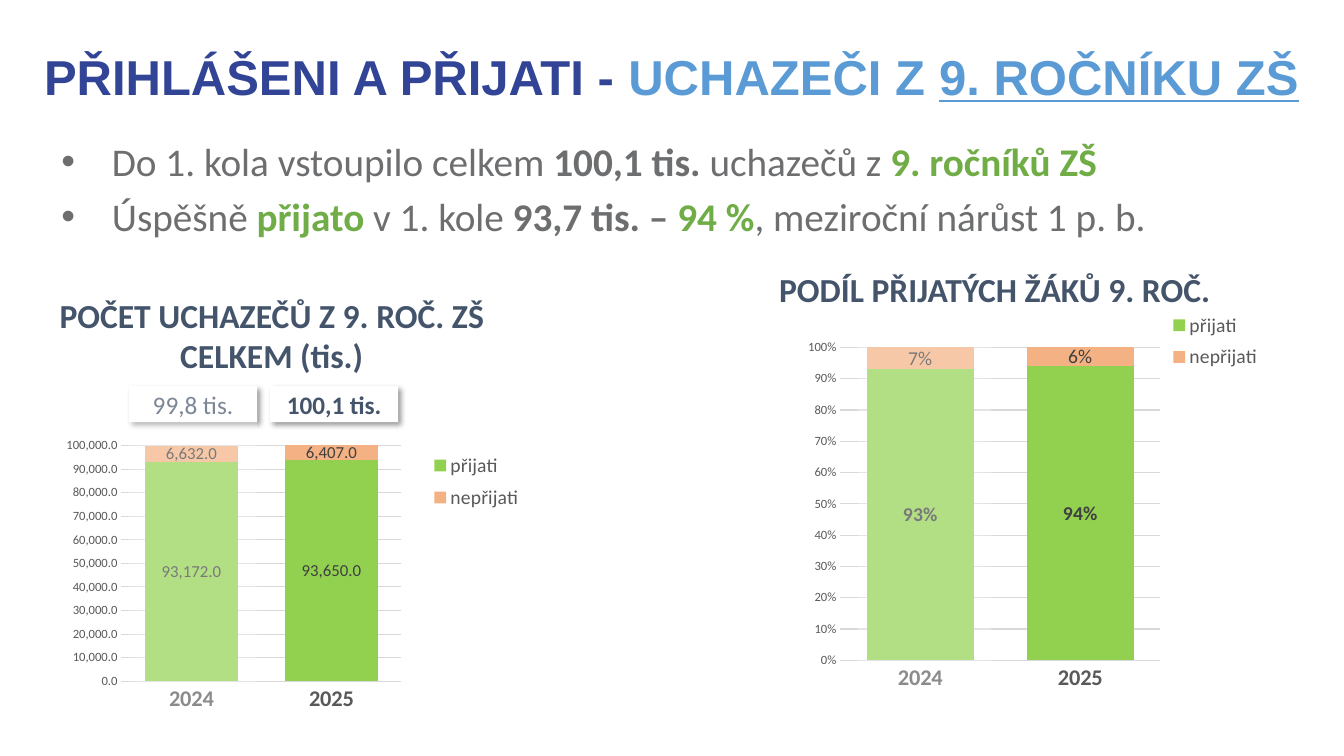
from dataclasses import dataclass

from lxml.etree import SubElement
from pptx import Presentation
from pptx.chart.chart import Chart
from pptx.chart.data import CategoryChartData as Data
from pptx.dml.color import RGBColor as Rgb
from pptx.enum.chart import XL_CHART_TYPE as Kind
from pptx.enum.chart import XL_LEGEND_POSITION as Side
from pptx.enum.chart import XL_TICK_MARK as Tick
from pptx.enum.shapes import MSO_SHAPE as Form
from pptx.enum.text import MSO_ANCHOR as Anchor
from pptx.enum.text import MSO_AUTO_SIZE as Fit
from pptx.enum.text import PP_ALIGN as Align
from pptx.oxml import parse_xml
from pptx.oxml.ns import nsdecls, qn
from pptx.util import Emu, Pt

SCALE = 9144


@dataclass(frozen=True)
class Theme:
    head: str = "Arial"
    body: str = "Calibri"
    navy: str = "324496"
    sky: str = "5B9BD5"
    gray: str = "6D6E70"
    green: str = "70AD47"
    slate: str = "44546A"
    white: str = "FFFFFF"
    black: str = "000000"
    axis: str = "595959"
    grid: str = "D9D9D9"
    label: str = "404040"
    lime: str = "92D050"
    peach: str = "F4B183"
    title: int = 35
    list: int = 28
    name: int = 24
    total: int = 18
    year: int = 16
    key: int = 14
    base: int = 10
    scale: int = 9


THEME = Theme()


@dataclass(frozen=True)
class Box:
    left: int
    top: int
    width: int
    height: int

    def emu(self) -> list[Emu]:
        return [Emu(n * SCALE) for n in (self.left, self.top, self.width, self.height)]


@dataclass(frozen=True)
class Run:
    text: str
    color: str
    bold: bool = False
    line: bool = False


@dataclass(frozen=True)
class Row:
    name: str
    color: str
    vals: tuple[float, ...]
    bold: bool = False


@dataclass(frozen=True)
class Graph:
    box: Box
    kind: Kind
    rows: tuple[Row, ...]
    form: str
    top: float
    size: int
    plot: tuple[float, ...]
    key: tuple[float, ...]


TITLE = (Run("PŘIHLÁŠENI A PŘIJATI - ", THEME.navy, True),
         Run("UCHAZEČI Z ", THEME.sky, True),
         Run("9. ROČNÍKU ZŠ", THEME.sky, True, True))
POINTS = (
    (Run("Do 1. kola vstoupilo celkem ", THEME.gray), Run("100,1 tis. ", THEME.gray, True),
     Run("uchazečů z ", THEME.gray), Run("9. ročníků ZŠ", THEME.green, True)),
    (Run("Úspěšně ", THEME.gray), Run("přijato ", THEME.green, True),
     Run("v 1. kole ", THEME.gray), Run("93,7 tis. – ", THEME.gray, True),
     Run("94 %", THEME.green, True), Run(", meziroční nárůst 1 p. b.", THEME.gray)),
)
GRAPHS = (
    Graph(Box(764, 295, 496, 414), Kind.COLUMN_STACKED_100,
          (Row("přijati", THEME.lime, (0.93, 0.94), True),
           Row("nepřijati", THEME.peach, (0.07, 0.06))),
          "0%", 1, 14, (0.14, 0.12, 0.64, 0.75), (0.78, 0.02, 0.22, 0.17)),
    Graph(Box(51, 390, 496, 325), Kind.COLUMN_STACKED,
          (Row("přijati", THEME.lime, (93172, 93650)),
           Row("nepřijati", THEME.peach, (6632, 6407))),
          "#,##0.0", 100000, 12, (0.14, 0.16, 0.56, 0.72), (0.74, 0.16, 0.22, 0.22)),
)
TOTALS = (Run("99,8 tis.", THEME.slate), Run("100,1 tis.", THEME.slate, True))
VEILS = (Box(851, 335, 132, 373), Box(128, 354, 127, 354))
NAMES = ((Box(744, 259, 485, 55), "PODÍL PŘIJATÝCH ŽÁKŮ 9. ROČ."),
         (Box(37, 305, 465, 55), "POČET UCHAZEČŮ Z 9. ROČ. ZŠ CELKEM (tis.)"))


def style(font, size: int, color: str, bold: bool = False, face: str = THEME.body) -> None:
    font.name, font.size, font.bold = face, Pt(size), bold
    font.color.rgb = Rgb.from_string(color)


def write(para, runs: tuple[Run, ...], size: int, face: str = THEME.body) -> None:
    for item in runs:
        run = para.add_run()
        run.text = item.text
        style(run.font, size, item.color, item.bold, face)
        if item.line:
            run.font.underline = True


def place(shape, box: Box) -> None:
    shape.left, shape.top, shape.width, shape.height = box.emu()


def center(shape, runs: tuple[Run, ...], size: int, face: str = THEME.body) -> None:
    frame = shape.text_frame
    frame.word_wrap, frame.auto_size = True, Fit.NONE
    frame.vertical_anchor = Anchor.MIDDLE
    para = frame.paragraphs[0]
    para.alignment = Align.CENTER
    write(para, runs, size, face)


def points(shape) -> None:
    frame = shape.text_frame
    frame.word_wrap, frame.auto_size = True, Fit.NONE
    frame.vertical_anchor = Anchor.TOP
    for i, runs in enumerate(POINTS):
        para = frame.add_paragraph() if i else frame.paragraphs[0]
        props = para._p.get_or_add_pPr()
        props.set("marL", str(50 * SCALE))
        props.set("indent", str(-50 * SCALE))
        SubElement(props, qn("a:buFont"), typeface=THEME.head)
        SubElement(props, qn("a:buChar"), char="•")
        para.space_before = Pt(6 if i else 0)
        write(para, runs, THEME.list)


def layout(owner, spot: int, area: tuple[float, ...], inner: bool = False) -> None:
    for old in owner.findall(qn("c:layout")):
        owner.remove(old)
    mode = '<c:layoutTarget val="inner"/>' if inner else ""
    mode += '<c:xMode val="edge"/><c:yMode val="edge"/>'
    sides = "".join(f'<c:{tag} val="{n}"/>' for tag, n in zip("xywh", area))
    owner.insert(spot, parse_xml(
        f'<c:layout {nsdecls("c")}><c:manualLayout>{mode}{sides}</c:manualLayout></c:layout>'))


def axes(chart: Chart, graph: Graph) -> None:
    cat, val = chart.category_axis, chart.value_axis
    for axis in (cat, val):
        axis.major_tick_mark = axis.minor_tick_mark = Tick.NONE
    style(cat.tick_labels.font, THEME.year, THEME.axis, True)
    style(val.tick_labels.font, THEME.scale, THEME.axis)
    val.tick_labels.number_format = graph.form
    val.tick_labels.number_format_is_linked = False
    val.minimum_scale, val.maximum_scale = 0, graph.top
    val.format.line.fill.background()
    for line in (cat.format.line, val.major_gridlines.format.line):
        line.color.rgb, line.width = Rgb.from_string(THEME.grid), Pt(0.75)


def draw(slide, graph: Graph) -> None:
    data = Data(number_format=graph.form)
    data.categories = ["2024", "2025"]
    for row in graph.rows:
        data.add_series(row.name, row.vals)
    chart = slide.shapes.add_chart(graph.kind, *graph.box.emu(), data).chart
    style(chart.font, THEME.base, THEME.black)
    chart.has_title, chart.has_legend = False, True
    chart.legend.position, chart.legend.include_in_layout = Side.BOTTOM, False
    style(chart.legend.font, THEME.key, THEME.axis)
    axes(chart, graph)
    plot = chart.plots[0]
    plot.gap_width, plot.overlap, plot.vary_by_categories = 50, 100, False
    for part, row in zip(plot.series, graph.rows):
        part.format.fill.solid()
        part.format.fill.fore_color.rgb = Rgb.from_string(row.color)
        tags = part.data_labels
        tags.show_value = True
        tags.number_format, tags.number_format_is_linked = graph.form, False
        style(tags.font, graph.size, THEME.label, row.bold)
    layout(chart._chartSpace.find(f'.//{qn("c:plotArea")}'), 0, graph.plot, True)
    layout(chart._chartSpace.find(f'.//{qn("c:legend")}'), 1, graph.key)


def panel(slide, box: Box):
    shape = slide.shapes.add_shape(Form.RECTANGLE, *box.emu())
    shape.shadow.inherit = False
    shape.fill.solid()
    shape.fill.fore_color.rgb = Rgb.from_string(THEME.white)
    shape.line.fill.background()
    return shape


def shade(shape) -> None:
    glow = SubElement(shape._element.spPr.find(qn("a:effectLst")), qn("a:outerShdw"),
                      blurRad=str(Pt(4)), dist=str(Pt(3)), dir="2700000",
                      algn="tl", rotWithShape="0")
    tint = SubElement(glow, qn("a:srgbClr"), val=THEME.black)
    SubElement(tint, qn("a:alpha"), val="40000")


def main() -> None:
    deck = Presentation()
    deck.slide_width, deck.slide_height = Emu(1333 * SCALE), Emu(750 * SCALE)
    slide = deck.slides.add_slide(deck.slide_layouts[1])
    title, body = slide.placeholders
    place(title, Box(6, 32, 1320, 84))
    center(title, TITLE, THEME.title, THEME.head)
    title.text_frame.paragraphs[0].line_spacing = 1.05
    place(body, Box(51, 131, 1234, 113))
    points(body)
    for graph in GRAPHS:
        draw(slide, graph)
    for i, total in enumerate(TOTALS):
        card = panel(slide, Box(128 + 140 * i, 383, 127, 36))
        shade(card)
        center(card, (total,), THEME.total)
    for box in VEILS:
        veil = panel(slide, box)
        tint = veil._element.spPr.find(f'{qn("a:solidFill")}/{qn("a:srgbClr")}')
        SubElement(tint, qn("a:alpha"), val="30000")
    for box, text in NAMES:
        center(slide.shapes.add_textbox(*box.emu()), (Run(text, THEME.slate, True),), THEME.name)
    deck.save("out.pptx")


if __name__ == "__main__":
    main()
